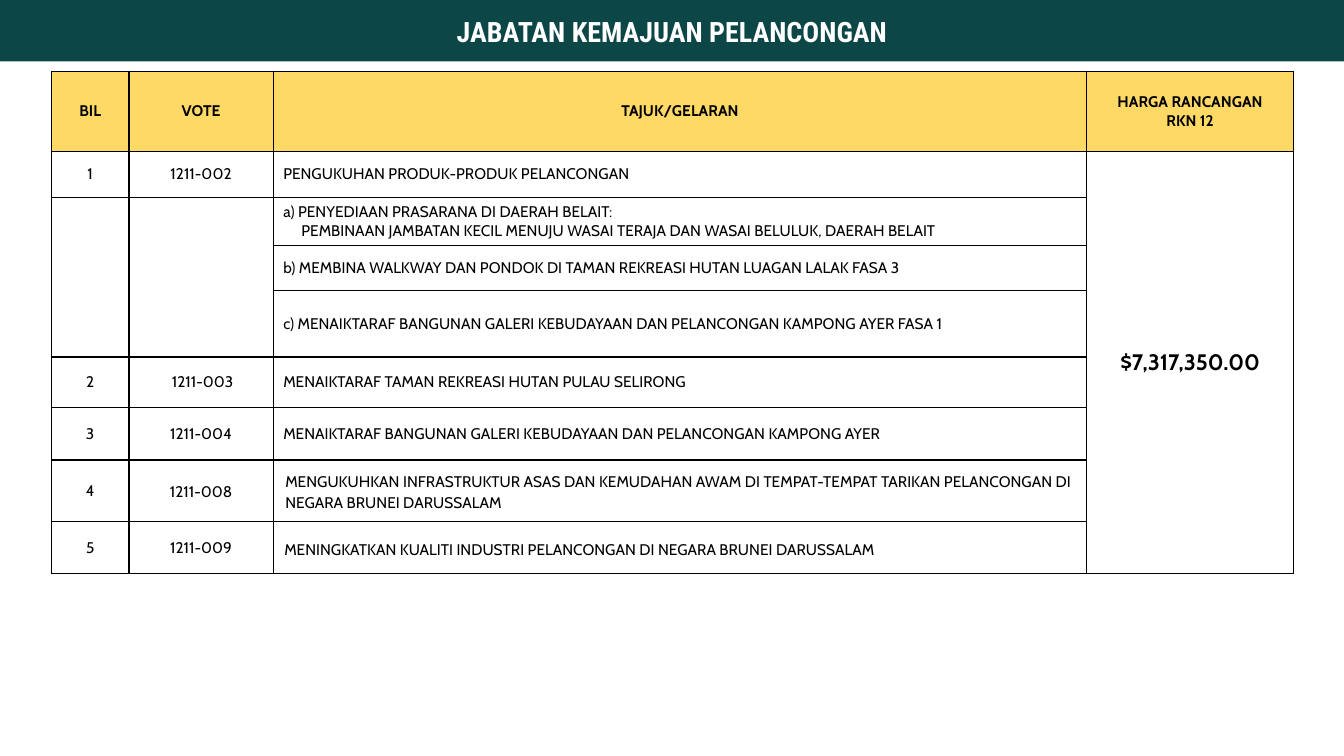
import pptx
import pptx.util
import pptx.dml.color
import pptx.enum.shapes
import pptx.enum.text
import pptx.oxml.ns
import lxml.etree

Inches = pptx.util.Inches
ALIGN = pptx.enum.text.PP_ALIGN
MIDDLE = pptx.enum.text.MSO_ANCHOR.MIDDLE

SLIDE_WIDTH, SLIDE_HEIGHT = 13.33, 7.5
TEAL, YELLOW, WHITE, BLACK = "0C4647", "FFD966", "FFFFFF", "000000"

HEADING = "JABATAN KEMAJUAN PELANCONGAN"
PROJECTS = [
    ("BIL", "VOTE", "TAJUK/GELARAN", "HARGA RANCANGAN\nRKN 12"),
    ("1", "1211-002", "PENGUKUHAN PRODUK-PRODUK PELANCONGAN", "$7,317,350.00"),
    ("", "", "a) PENYEDIAAN PRASARANA DI DAERAH BELAIT:\n"
     "PEMBINAAN JAMBATAN KECIL MENUJU WASAI TERAJA DAN WASAI BELULUK, DAERAH BELAIT", ""),
    ("", "", "b) MEMBINA WALKWAY DAN PONDOK DI TAMAN REKREASI HUTAN LUAGAN LALAK FASA 3", ""),
    ("", "", "c) MENAIKTARAF BANGUNAN GALERI KEBUDAYAAN DAN PELANCONGAN KAMPONG AYER FASA 1", ""),
    ("2", "1211-003", "MENAIKTARAF TAMAN REKREASI HUTAN PULAU SELIRONG", ""),
    ("3", "1211-004", "MENAIKTARAF BANGUNAN GALERI KEBUDAYAAN DAN PELANCONGAN KAMPONG AYER", ""),
    ("4", "1211-008", "MENGUKUHKAN INFRASTRUKTUR ASAS DAN KEMUDAHAN AWAM DI TEMPAT-TEMPAT "
     "TARIKAN PELANCONGAN DI NEGARA BRUNEI DARUSSALAM", ""),
    ("5", "1211-009", "MENINGKATKAN KUALITI INDUSTRI PELANCONGAN DI NEGARA BRUNEI DARUSSALAM", ""),
]
COLUMN_WIDTHS = [0.77, 1.43, 8.07, 2.05]
ROW_HEIGHTS = [0.79, 0.46, 0.46, 0.45, 0.66, 0.5, 0.52, 0.61, 0.52]
TABLE_LEFT, TABLE_TOP = 0.51, 0.71
MERGES = [((1, 3), (8, 3)), ((2, 0), (4, 0)), ((2, 1), (4, 1))]
TITLE_COLUMN, PRICE = 2, (1, 3)

MARGINS = (0.1, 0.05, 0.1, 0.05)
CELL_MARGINS = {(7, 1): (0.1, 0.1, 0.1, 0.1), (7, 2): (0.05, 0.01, 0.05, 0), (8, 2): (0.05, 0.01, 0.05, 0)}
INDENTS = {(2, 2, 1): (0.18, 0), (5, 1, 0): (0.03, 0), (7, 2, 0): (0.07, 0), (8, 2, 0): (0.1, -0.04)}
THICK_EDGES = {(4, "B"), (5, "T")}


def colour(value):
    return pptx.dml.color.RGBColor.from_string(value)


def apply(target, formats):
    for name, value in formats.items():
        setattr(target, name, value)


def style_font(paragraph, name, size, ink, bold):
    apply(paragraph.font, {"name": name, "size": pptx.util.Pt(size), "bold": bold})
    paragraph.font.color.rgb = colour(ink)


def frame_margins(values):
    sides = ("margin_left", "margin_top", "margin_right", "margin_bottom")
    return {side: Inches(value) for side, value in zip(sides, values)}


def draw_borders(cell, row):
    properties = cell._tc.get_or_add_tcPr()
    qn = pptx.oxml.ns.qn
    for position, side in enumerate("LRTB"):
        points = 1.5 if (row, side) in THICK_EDGES else 1
        edge = lxml.etree.Element(qn(f"a:ln{side}"), w=str(pptx.util.Pt(points)))
        fill = lxml.etree.SubElement(edge, qn("a:solidFill"))
        lxml.etree.SubElement(fill, qn("a:srgbClr"), val=BLACK)
        properties.insert(position, edge)


def fill_cell(cell, row, column, text):
    apply(cell, {"text": text, "vertical_anchor": MIDDLE})
    apply(cell, frame_margins(CELL_MARGINS.get((row, column), MARGINS)))
    cell.fill.solid()
    cell.fill.fore_color.rgb = colour(WHITE if row else YELLOW)
    left_aligned = row > 0 and column == TITLE_COLUMN
    for line, paragraph in enumerate(cell.text_frame.paragraphs):
        paragraph.alignment = ALIGN.LEFT if left_aligned else ALIGN.CENTER
        if (row, column) in CELL_MARGINS:
            paragraph.line_spacing = 1.15
        is_price = (row, column) == PRICE
        style_font(paragraph, "Cabin", 16 if is_price else 11, BLACK, row == 0 or is_price)
        if (row, column, line) in INDENTS:
            margin, first = INDENTS[row, column, line]
            layout = paragraph._p.get_or_add_pPr()
            layout.set("marL", str(Inches(margin)))
            layout.set("indent", str(Inches(first)))
    draw_borders(cell, row)


def add_projects(slide):
    frame = slide.shapes.add_table(
        len(ROW_HEIGHTS), len(COLUMN_WIDTHS), Inches(TABLE_LEFT), Inches(TABLE_TOP),
        Inches(sum(COLUMN_WIDTHS)), Inches(sum(ROW_HEIGHTS)))
    projects = frame.table
    apply(projects, {"first_row": False, "horz_banding": False})
    for column, width in zip(projects.columns, COLUMN_WIDTHS):
        column.width = Inches(width)
    for row, height in zip(projects.rows, ROW_HEIGHTS):
        row.height = Inches(height)
    for row, texts in enumerate(PROJECTS):
        for column, text in enumerate(texts):
            fill_cell(projects.cell(row, column), row, column, text)
    for first, last in MERGES:
        projects.cell(*first).merge(projects.cell(*last))


def add_heading(slide):
    band = slide.shapes.add_shape(
        pptx.enum.shapes.MSO_SHAPE.RECTANGLE, 0, 0, Inches(SLIDE_WIDTH), Inches(0.61))
    band.shadow.inherit = False
    band.fill.solid()
    band.fill.fore_color.rgb = colour(TEAL)
    band.line.fill.background()

    heading = slide.shapes.title
    apply(heading, {"left": Inches(0.03), "top": Inches(0.09),
                    "width": Inches(13.27), "height": Inches(0.44)})
    apply(heading.text_frame, {"text": HEADING, "word_wrap": True, "vertical_anchor": MIDDLE,
                               "auto_size": pptx.enum.text.MSO_AUTO_SIZE.NONE})
    apply(heading.text_frame, frame_margins(MARGINS))
    paragraph = heading.text_frame.paragraphs[0]
    paragraph.alignment = ALIGN.CENTER
    style_font(paragraph, "Roboto Condensed", 20, WHITE, True)
    band._element.addnext(heading._element)


def main():
    deck = pptx.Presentation()
    apply(deck, {"slide_width": Inches(SLIDE_WIDTH), "slide_height": Inches(SLIDE_HEIGHT)})
    slide = deck.slides.add_slide(deck.slide_layouts[5])
    add_projects(slide)
    add_heading(slide)
    deck.save("out.pptx")


if __name__ == "__main__":
    main()
